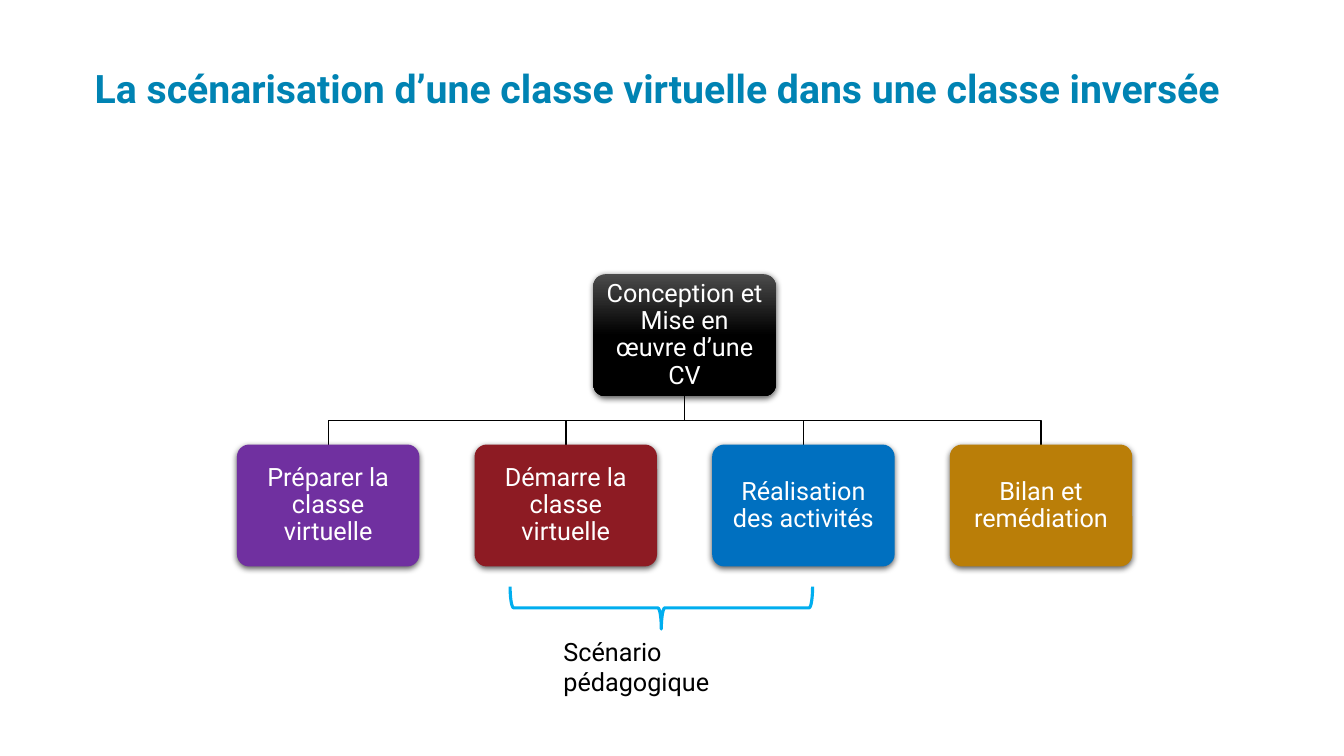
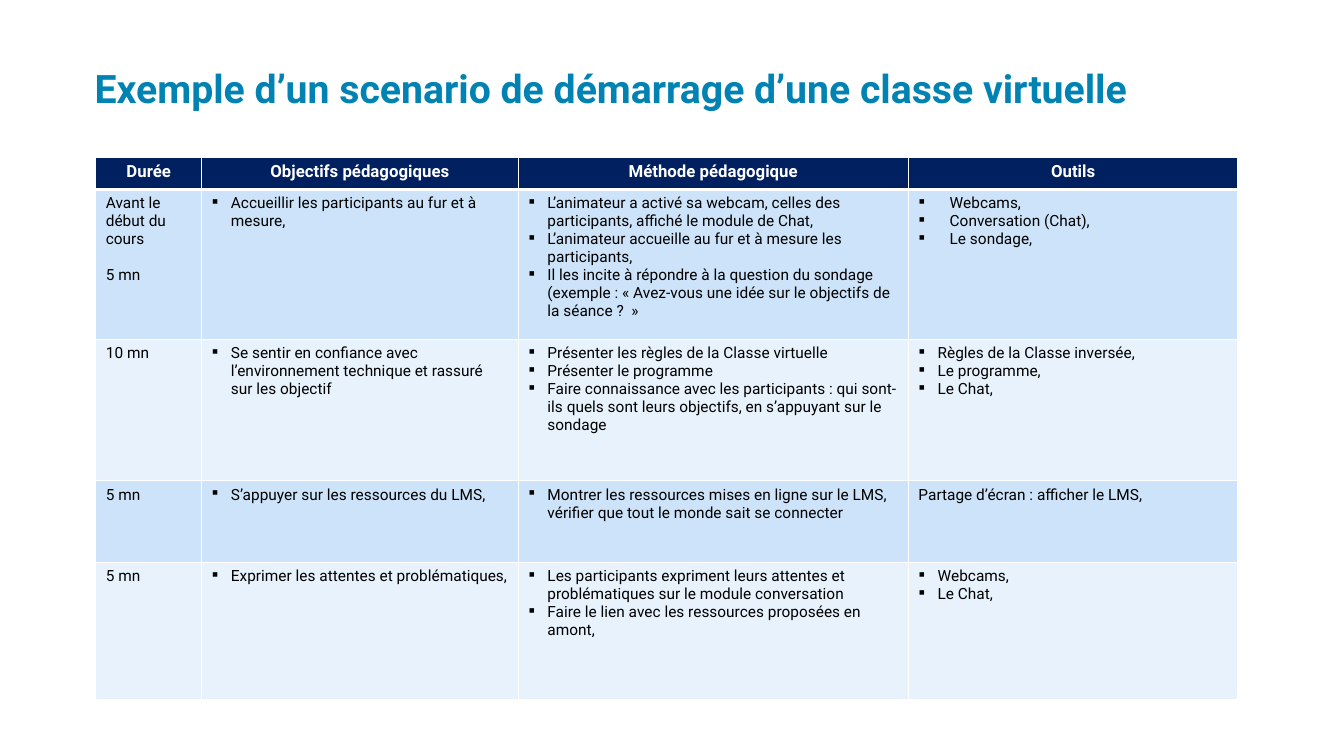
from lxml import etree
from pptx import Presentation
from pptx.dml.color import RGBColor
from pptx.enum.shapes import MSO_SHAPE
from pptx.enum.text import MSO_ANCHOR, PP_ALIGN
from pptx.oxml.ns import qn
from pptx.util import Inches, Pt

ROUNDED, BRACE = MSO_SHAPE.ROUNDED_RECTANGLE, MSO_SHAPE.LEFT_BRACE
MIDDLE, BOTTOM = MSO_ANCHOR.MIDDLE, MSO_ANCHOR.BOTTOM
LEFT, CENTER = PP_ALIGN.LEFT, PP_ALIGN.CENTER

FONT = "Roboto"
WHITE, BLACK = "FFFFFF", "000000"
TITLE, ACCENT, HEADER = "0083B3", "00AEEF", "002060"
BANDS = ("CCE3F9", "E7F2FC")

# Indents of table paragraphs, in inches
PLAIN, TIGHT, WIDE = 0, 0.19, 0.31


def rgb(color):
    return RGBColor.from_string(color)


def sub(parent, tag, **attrs):
    return etree.SubElement(parent, qn(tag), attrs)


class Deck:
    def __init__(self):
        self.prs = Presentation()
        self.prs.slide_width, self.prs.slide_height = Inches(13.33), Inches(7.5)
        self.s = None

    def new_slide(self, title):
        self.s = self.prs.slides.add_slide(self.prs.slide_layouts[6])
        self.text(title, 0.84, 0.58, 11.58, 0.57, 28, TITLE, bold=True,
                  anchor=BOTTOM, spacing=0.8)

    def style(self, p, size, color, bold=False, align=LEFT, spacing=1.0):
        p.alignment, p.line_spacing = align, spacing
        for r in p.runs:
            r.font.name, r.font.size, r.font.bold = FONT, Pt(size), bold
            r.font.color.rgb = rgb(color)

    def text(self, text, x, y, w, h, size, color, bold=False, anchor=None, spacing=1.0):
        tf = self.s.shapes.add_textbox(*map(Inches, (x, y, w, h))).text_frame
        tf.word_wrap = True
        tf.vertical_anchor = anchor
        tf.text = text
        self.style(tf.paragraphs[0], size, color, bold, spacing=spacing)

    def box(self, text, x, y, w, h, color, top_color=None):
        sp = self.s.shapes.add_shape(ROUNDED, *map(Inches, (x, y, w, h)))
        sp.adjustments[0] = 0.1
        sp.line.fill.background()
        if top_color:
            sp.fill.gradient()
            sp.fill.gradient_angle = 270
            for stop, pos, c in zip(sp.fill.gradient_stops, (0, 0.5), (top_color, color)):
                stop.position, stop.color.rgb = pos, rgb(c)
        else:
            sp.fill.solid()
            sp.fill.fore_color.rgb = rgb(color)
        # Soft shadow below the box
        sp.shadow.inherit = False
        effects = sp._element.spPr.find(qn("a:effectLst"))
        shadow = sub(effects, "a:outerShdw", blurRad=str(Pt(4.5)), dist=str(Pt(1.5)),
                     dir="5400000", algn="ctr", rotWithShape="0")
        sub(sub(shadow, "a:srgbClr", val=BLACK), "a:alpha", val="63000")
        # Label
        tf = sp.text_frame
        tf.word_wrap, tf.vertical_anchor = True, MIDDLE
        tf.margin_left = tf.margin_right = Inches(0.07)
        tf.margin_top = tf.margin_bottom = Inches(0.05)
        tf.text = text
        self.style(tf.paragraphs[0], 18, WHITE, align=CENTER, spacing=0.9)

    def branch(self, x1, y1, x2, y2):
        """Open line going down, across and down again."""
        mid = (y1 + y2) / 2
        corners = [(Inches(x), Inches(y)) for x, y in
                   ((x1, y1), (x1, mid), (x2, mid), (x2, y2))]
        outline = self.s.shapes.build_freeform(*corners[0])
        outline.add_line_segments(corners[1:], close=False)
        sp = outline.convert_to_shape()
        sp.shadow.inherit = False
        sp.fill.background()
        sp.line.color.rgb, sp.line.width = rgb(BLACK), Pt(1)

    def brace_below(self, x, y, w, h):
        """Left brace turned so that its point faces down."""
        left, top = x + (w - h) / 2, y - (w - h) / 2
        sp = self.s.shapes.add_shape(BRACE, *map(Inches, (left, top, h, w)))
        sp.rotation = 270
        sp.shadow.inherit = False
        sp.fill.background()
        sp.line.color.rgb, sp.line.width = rgb(ACCENT), Pt(2.25)

    def cell(self, cell, lines, indent, fill, color, size, top, bottom, **style):
        tcPr = cell._tc.get_or_add_tcPr()
        for side, width in (("L", 1), ("R", 1), ("T", top), ("B", bottom)):
            ln = sub(tcPr, f"a:ln{side}", w=str(Pt(width)))
            sub(sub(ln, "a:solidFill"), "a:srgbClr", val=WHITE)
        cell.fill.solid()
        cell.fill.fore_color.rgb = rgb(fill)
        tf = cell.text_frame
        tf.text = "\n".join(lines)
        for i, p in enumerate(tf.paragraphs):
            if indent:
                pPr = p._p.get_or_add_pPr()
                pPr.set("marL", str(Inches(indent)))
                pPr.set("indent", str(-Inches(indent)))
                # In Wingdings this character is a small square
                sub(pPr, "a:buFont", typeface="Wingdings", charset="2")
                sub(pPr, "a:buChar", char="§")
            elif i:
                p.space_before = Pt(13)
            self.style(p, size, color, **style)

    def table(self, x, y, widths, heights, header, rows):
        table = self.s.shapes.add_table(
            len(heights), len(widths), Inches(x), Inches(y),
            Inches(sum(widths)), Inches(sum(heights))).table
        table.horz_banding = False
        for col, w in zip(table.columns, widths):
            col.width = Inches(w)
        for row, h in zip(table.rows, heights):
            row.height = Inches(h)
        for j, label in enumerate(header):
            self.cell(table.cell(0, j), [label], PLAIN, HEADER, WHITE, 12, 1, 3,
                      bold=True, align=CENTER)
        for i, row in enumerate(rows):
            for j, (indent, *lines) in enumerate(row):
                self.cell(table.cell(i + 1, j), lines, indent, BANDS[i % 2], BLACK, 11,
                          1 if i else 3, 1)


def organisation_slide(deck):
    deck.new_slide("La scénarisation d’une classe virtuelle dans une classe inversée")
    w, h = 1.81, 1.21
    first, last = 2.35, 9.42
    root_y, step_y = 2.72, 4.41
    steps = [("Préparer la classe virtuelle", "7030A0"),
             ("Démarre la classe virtuelle", "8D1B23"),
             ("Réalisation des activités", "0070C0"),
             ("Bilan et remédiation", "BA7E08")]
    gap = (last - first) / (len(steps) - 1)

    # Root box
    root_x = (first + last) / 2
    deck.box("Conception et Mise en œuvre d’une CV", root_x, root_y, w, h,
             BLACK, top_color="4B4B4B")

    # Steps
    for i, (label, color) in enumerate(steps):
        x = first + i * gap
        deck.branch(root_x + w / 2, root_y + h, x + w / 2, step_y)
        deck.box(label, x, step_y, w, h, color)

    # Scenario bracket
    deck.brace_below(5.06, 5.82, 3, 0.42)
    deck.text("Scénario pédagogique", 5.49, 6.26, 2.5, 0.7, 18, BLACK)


def scenario_slide(deck):
    deck.new_slide("Exemple d’un scenario de démarrage d’une classe virtuelle")
    header = ["Durée", "Objectifs pédagogiques", "Méthode pédagogique", "Outils"]
    rows = [
        [(PLAIN, "Avant le début du cours", "5 mn"),
         (TIGHT, "Accueillir les participants au fur et à mesure,"),
         (TIGHT,
          "L’animateur a activé sa webcam, celles des participants, affiché le module de Chat,",
          "L’animateur accueille au fur et à mesure les participants,",
          "Il les incite à répondre à la question du sondage (exemple : « Avez-vous une idée "
          "sur le objectifs de la séance ?  »"),
         (WIDE, "Webcams,", "Conversation (Chat),", "Le sondage,")],
        [(PLAIN, "10 mn"),
         (TIGHT, "Se sentir en confiance avec l’environnement technique et rassuré "
                 "sur les objectif"),
         (TIGHT, "Présenter les règles de la Classe virtuelle",
          "Présenter le programme",
          "Faire connaissance avec les participants : qui sont-ils quels sont leurs "
          "objectifs, en s’appuyant sur le sondage"),
         (TIGHT, "Règles de la Classe inversée,", "Le programme,", "Le Chat,")],
        [(PLAIN, "5 mn"),
         (TIGHT, "S’appuyer sur les ressources du LMS,"),
         (TIGHT, "Montrer les ressources mises en ligne sur le LMS, vérifier que tout "
                 "le monde sait se connecter"),
         (PLAIN, "Partage d’écran : afficher le LMS,")],
        [(PLAIN, "5 mn"),
         (TIGHT, "Exprimer les attentes et problématiques,"),
         (TIGHT, "Les participants expriment leurs attentes et problématiques sur le "
                 "module conversation",
          "Faire le lien avec les ressources proposées en amont,"),
         (TIGHT, "Webcams,", "Le Chat,")],
    ]
    deck.table(0.95, 1.56, [1.05, 3.14, 3.87, 3.27], [0.32, 1.49, 1.4, 0.81, 1.36],
               header, rows)


def main():
    deck = Deck()
    organisation_slide(deck)
    scenario_slide(deck)
    deck.prs.save("out.pptx")


if __name__ == "__main__":
    main()
